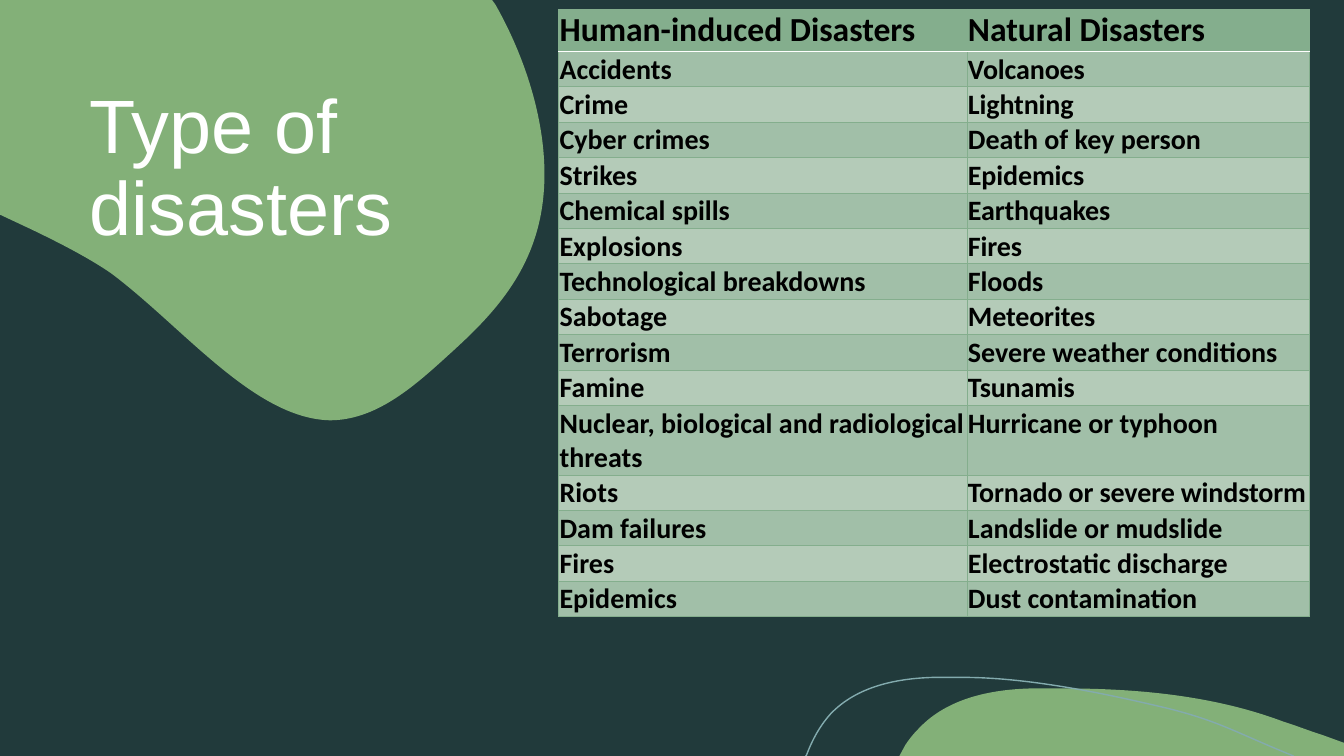
from lxml import etree
from pptx import Presentation
from pptx.dml.color import RGBColor
from pptx.enum.shapes import MSO_SHAPE
from pptx.enum.text import MSO_ANCHOR, PP_ALIGN
from pptx.oxml.ns import qn
from pptx.util import Inches, Pt

LEFT = PP_ALIGN.LEFT
TOP = MSO_ANCHOR.TOP
RECTANGLE = MSO_SHAPE.RECTANGLE

DARK, GREEN, BLUE_GREY = "213A3B", "83B078", "83ABAE"
HEADER, BAND_DARK, BAND_LIGHT = "84AE8D", "A1BFA8", "B4CBB8"
WHITE, BLACK = "FFFFFF", "000000"
SLIDE_WIDTH, SLIDE_HEIGHT = Inches(13.33), Inches(7.5)
UNITS_PER_INCH = 1000

# Outlines: a start point, then lines (2 numbers) and Bezier curves (6 numbers)
TOP_BLOB = [
    (0, 0), (4.88, 0), (4.91, 0.04),
    (5.23, 0.6, 5.45, 1.31, 5.39, 1.94),
    (5.32, 2.7, 4.86, 3.15, 4.44, 3.53),
    (4.09, 3.85, 3.72, 4.17, 3.27, 4.17),
    (2.52, 4.15, 1.82, 3.25, 1.1, 2.71),
    (0.88, 2.56, 0.61, 2.42, 0.32, 2.28),
    (0, 2.13), (0, 0),
]
BOTTOM_BLOB = [
    (10.54, 6.83),
    (11.28, 6.83, 12.04, 6.9, 12.73, 7.16),
    (12.86, 7.2, 12.98, 7.25, 13.11, 7.29),
    (13.33, 7.37), (13.33, 7.5), (8.92, 7.5), (8.98, 7.39),
    (9.02, 7.33, 9.06, 7.28, 9.11, 7.23),
    (9.39, 6.93, 9.82, 6.84, 10.23, 6.83),
    (10.33, 6.83, 10.43, 6.83, 10.54, 6.83),
]
BOTTOM_CURVE = [
    (7.99, 7.5), (8, 7.49),
    (8.06, 7.33, 8.14, 7.19, 8.24, 7.08),
    (8.5, 6.81, 8.89, 6.73, 9.26, 6.72),
    (9.55, 6.72),
    (10.22, 6.72, 11, 6.89, 11.55, 7.02),
    (12.09, 7.15, 12.26, 7.27, 12.83, 7.5),
]

DISASTERS = [
    ("Human-induced Disasters", "Natural Disasters"),
    ("Accidents", "Volcanoes"),
    ("Crime", "Lightning"),
    ("Cyber crimes", "Death of key person"),
    ("Strikes", "Epidemics"),
    ("Chemical spills", "Earthquakes"),
    ("Explosions", "Fires"),
    ("Technological breakdowns", "Floods"),
    ("Sabotage", "Meteorites"),
    ("Terrorism", "Severe weather conditions"),
    ("Famine", "Tsunamis"),
    ("Nuclear, biological and radiological threats", "Hurricane or typhoon"),
    ("Riots", "Tornado or severe windstorm"),
    ("Dam failures", "Landslide or mudslide"),
    ("Fires", "Electrostatic discharge"),
    ("Epidemics", "Dust contamination"),
]
TIGHT_ROWS = {1, 2, 4, 5, 6, 7, 8, 10, 12}  # tighter letters in the right column
COLUMN_WIDTHS = (4.05, 3.4)
TABLE_HEIGHT = 6.03
SPECIAL_HEIGHTS = {0: 0.42, 11: 0.69}
ROW_HEIGHT = ((TABLE_HEIGHT - sum(SPECIAL_HEIGHTS.values()))
              / (len(DISASTERS) - len(SPECIAL_HEIGHTS)))


def rgb(color):
    return RGBColor.from_string(color)


def paint(shape, fill=None, line=None):
    shape.shadow.inherit = False
    if fill:
        shape.fill.solid()
        shape.fill.fore_color.rgb = rgb(fill)
    else:
        shape.fill.background()
    if line:
        shape.line.color.rgb = rgb(line)
        shape.line.width = Pt(1)
    else:
        shape.line.fill.background()


def add_outline(page, outline, fill=None, line=None):
    """Join the end points with lines, then bend the curved segments."""
    ends = [segment[-2:] for segment in outline]
    units = [(round(x * UNITS_PER_INCH), round(y * UNITS_PER_INCH)) for x, y in ends]
    builder = page.shapes.build_freeform(*units[0], scale=Inches(1) / UNITS_PER_INCH)
    builder.add_line_segments(units[1:], close=fill is not None)
    shape = builder.convert_to_shape()
    paint(shape, fill, line)

    left, top = min(x for x, _ in units), min(y for _, y in units)
    lines = list(shape._element.iter(qn("a:lnTo")))
    for element, segment in zip(lines, outline[1:]):
        if len(segment) == 2:
            continue
        curve = etree.Element(qn("a:cubicBezTo"))
        for x, y in zip(segment[::2], segment[1::2]):
            etree.SubElement(curve, qn("a:pt"),
                             x=str(round(x * UNITS_PER_INCH) - left),
                             y=str(round(y * UNITS_PER_INCH) - top))
        element.getparent().replace(element, curve)


def set_font(para, name, size, color, bold=False):
    para.alignment = LEFT
    para.font.name = name
    para.font.size = Pt(size)
    para.font.bold = bold
    para.font.color.rgb = rgb(color)


def add_title(page, text):
    box = page.shapes.add_textbox(Inches(0.79), Inches(0.83), Inches(4.21), Inches(2.5))
    frame = box.text_frame
    frame.word_wrap = True
    frame.vertical_anchor = TOP
    para = frame.paragraphs[0]
    para.text = text
    para.line_spacing = 0.9
    set_font(para, "Arial", 54, WHITE)


def add_border(cell, side, color, width):
    line = etree.SubElement(cell._tc.get_or_add_tcPr(), qn("a:ln" + side), w=str(Pt(width)))
    fill = etree.SubElement(line, qn("a:solidFill"))
    etree.SubElement(fill, qn("a:srgbClr"), val=color)


def fill_cell(cell, text, row, column):
    # Borders come before the fill; a white rule divides header and body
    rule, edge = (WHITE, 1), (HEADER, 0.5)
    add_border(cell, "L", *edge)
    add_border(cell, "R", *edge)
    add_border(cell, "T", *(rule if row == 1 else edge))
    add_border(cell, "B", *(rule if row == 0 else edge))
    cell.fill.solid()
    band = BAND_DARK if row % 2 else BAND_LIGHT
    cell.fill.fore_color.rgb = rgb(HEADER if row == 0 else band)

    cell.margin_left = cell.margin_right = cell.margin_top = Inches(0.01)
    cell.margin_bottom = 0
    cell.vertical_anchor = TOP
    para = cell.text_frame.paragraphs[0]
    span = para.add_run()
    span.text = text
    if column and row in TIGHT_ROWS:
        span._r.get_or_add_rPr().set("spc", "-10")
    set_font(para, "Calibri", 20 if row else 24, BLACK, bold=True)


def add_disaster_table(page):
    frame = page.shapes.add_table(
        len(DISASTERS), len(COLUMN_WIDTHS), Inches(5.54), Inches(0.09),
        Inches(sum(COLUMN_WIDTHS)), Inches(TABLE_HEIGHT))
    table = frame.table
    table.horz_banding = False
    for column, width in enumerate(COLUMN_WIDTHS):
        table.columns[column].width = Inches(width)
    for row, texts in enumerate(DISASTERS):
        table.rows[row].height = Inches(SPECIAL_HEIGHTS.get(row, ROW_HEIGHT))
        for column, text in enumerate(texts):
            fill_cell(table.cell(row, column), text, row, column)


def main():
    deck = Presentation()
    deck.slide_width, deck.slide_height = SLIDE_WIDTH, SLIDE_HEIGHT
    page = deck.slides.add_slide(deck.slide_layouts[6])

    # Dark backdrop
    backdrop = page.shapes.add_shape(RECTANGLE, 0, 0, SLIDE_WIDTH, SLIDE_HEIGHT)
    paint(backdrop, fill=DARK)

    # Title on its blob
    add_outline(page, TOP_BLOB, fill=GREEN)
    add_title(page, "Type of disasters")

    # Bottom decoration
    add_outline(page, BOTTOM_BLOB, fill=GREEN)
    add_outline(page, BOTTOM_CURVE, line=BLUE_GREY)

    add_disaster_table(page)
    deck.save("out.pptx")


if __name__ == "__main__":
    main()
